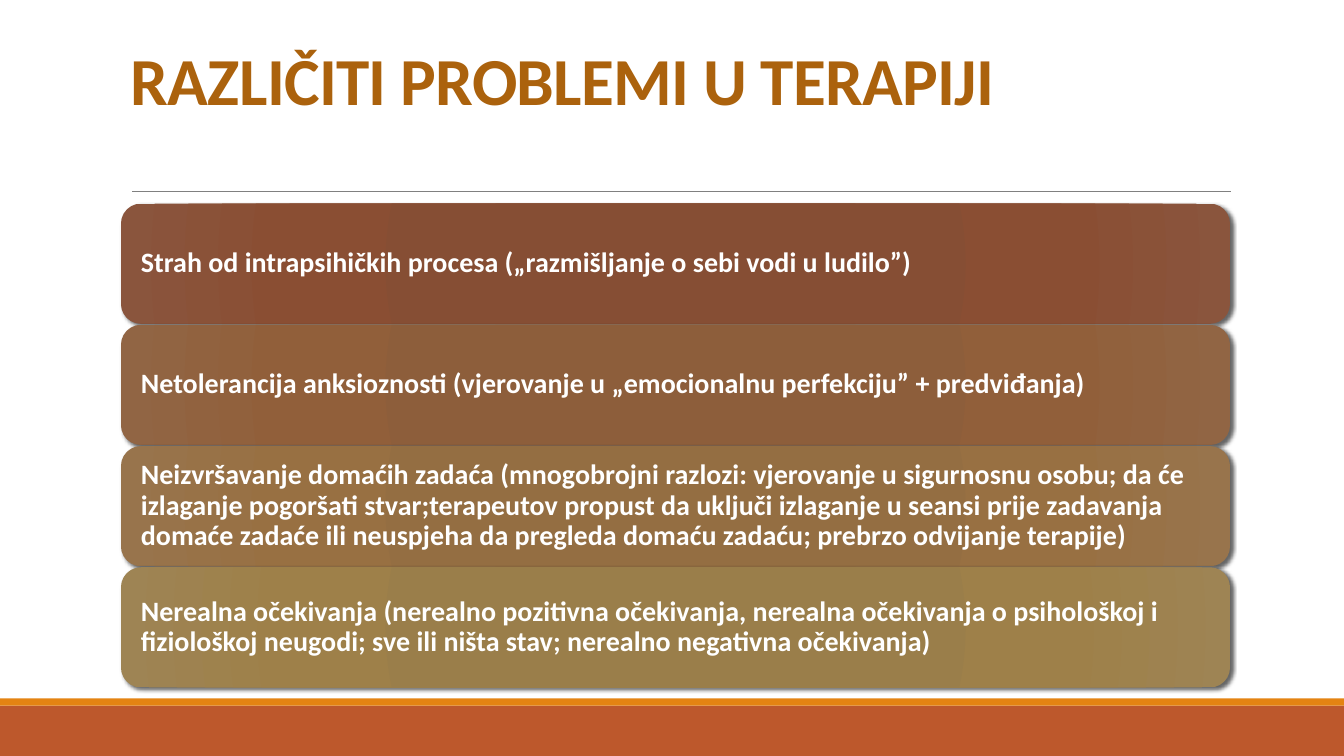
from lxml import etree
from pptx import Presentation
from pptx.dml.color import RGBColor
from pptx.enum.shapes import MSO_CONNECTOR, MSO_SHAPE
from pptx.enum.text import MSO_ANCHOR, PP_ALIGN
from pptx.oxml import parse_xml
from pptx.oxml.ns import nsdecls, qn
from pptx.util import Inches, Pt

RECT, ROUNDED = MSO_SHAPE.RECTANGLE, MSO_SHAPE.ROUNDED_RECTANGLE
STRAIGHT = MSO_CONNECTOR.STRAIGHT
MIDDLE, BOTTOM = MSO_ANCHOR.MIDDLE, MSO_ANCHOR.BOTTOM
LEFT = PP_ALIGN.LEFT

SLIDE_W, SLIDE_H = 13.33, 7.5
COLORS = {
    "title": "AB620D",
    "rule": "808080",
    "footer": "BD582C",
    "stripe": "E48312",
    "text": "FFFFFF",
    "shadow": "000000",
}
GRADIENT_STOPS = (0, 34, 70, 100)
PROBLEMS = [
    ("Strah od intrapsihičkih procesa („razmišljanje o sebi vodi u ludilo”)",
     ("874C32", "864E34", "8A4E33", "8A553D")),
    ("Netolerancija anksioznosti (vjerovanje u „emocionalnu perfekciju” + predviđanja)",
     ("8E5D39", "8D5E3B", "915F3A", "916544")),
    ("Neizvršavanje domaćih zadaća (mnogobrojni razlozi: vjerovanje u sigurnosnu osobu; "
     "da će izlaganje pogoršati stvar;terapeutov propust da uključi izlaganje u seansi "
     "prije zadavanja domaće zadaće ili neuspjeha da pregleda domaću zadaću; "
     "prebrzo odvijanje terapije)",
     ("946D40", "946E42", "987042", "98744C")),
    ("Nerealna očekivanja (nerealno pozitivna očekivanja, nerealna očekivanja o "
     "psihološkoj i fiziološkoj neugodi; sve ili ništa stav; nerealno negativna očekivanja)",
     ("9A7D48", "9A7E4A", "9E8049", "9E8454")),
]


def rgb(name):
    return RGBColor.from_string(COLORS[name])


def write_text(sp, text, size, color, spacing, frame):
    tf = sp.text_frame
    for key, value in {"word_wrap": True, **frame}.items():
        setattr(tf, key, value)
    p = tf.paragraphs[0]
    p.alignment, p.line_spacing = LEFT, spacing
    r = p.add_run()
    r.text = text
    for key, value in {"name": "Calibri", "size": Pt(size), "bold": True}.items():
        setattr(r.font, key, value)
    r.font.color.rgb = rgb(color)
    return r


def fill_radial(sp, colors):
    """Fill a shape with a circular gradient."""
    stops = "".join(
        f'<a:gs pos="{pos * 1000}"><a:srgbClr val="{color}"/></a:gs>'
        for pos, color in zip(GRADIENT_STOPS, colors))
    sp.fill.background()
    no_fill = sp._element.spPr.find(qn("a:noFill"))
    no_fill.getparent().replace(no_fill, parse_xml(
        f'<a:gradFill {nsdecls("a")} rotWithShape="1"><a:gsLst>{stops}</a:gsLst>'
        '<a:path path="circle"><a:fillToRect l="100000" t="100000" r="100000" b="100000"/>'
        '</a:path></a:gradFill>'))


def cast_shadow(sp):
    sp.shadow.inherit = False
    sp._element.spPr.find(qn("a:effectLst")).append(parse_xml(
        f'<a:outerShdw {nsdecls("a")} blurRad="{Pt(3)}" dist="{Pt(2)}" dir="2700000" '
        f'algn="ctr" rotWithShape="0"><a:srgbClr val="{COLORS["shadow"]}">'
        '<a:alpha val="60000"/></a:srgbClr></a:outerShdw>'))


def add_footer(slide, top, height, stripe_h):
    """Draw the bottom band with a thin stripe along its upper edge."""
    for color, y, h in (("footer", top + stripe_h, height - stripe_h),
                        ("stripe", top, stripe_h)):
        sp = slide.shapes.add_shape(RECT, 0, Inches(y), Inches(SLIDE_W), Inches(h))
        sp.shadow.inherit = False
        sp.fill.solid()
        sp.fill.fore_color.rgb = rgb(color)
        sp.line.fill.background()


def add_title(slide, left, top, width, height):
    """Place the title, with a rule below it."""
    sp = slide.shapes.add_textbox(*map(Inches, (left, top, width, height)))
    r = write_text(sp, "RAZLIČITI PROBLEMI U TERAPIJI", 48, "title", 0.85,
                   {"vertical_anchor": BOTTOM})
    r.font._element.set("spc", "-50")
    x, y = left + 0.11, top + 1.59
    rule = slide.shapes.add_connector(
        STRAIGHT, Inches(x), Inches(y), Inches(x + 10.9), Inches(y))
    rule.line.color.rgb = rgb("rule")
    rule.line.width = Pt(0.5)
    etree.SubElement(rule._element.spPr, qn("a:effectLst"))


def add_problems(slide, left, top, width, height, gap=0.01):
    """Stack one rounded bar for each problem in the given box."""
    bar_h = (height - gap * (len(PROBLEMS) - 1)) / len(PROBLEMS)
    frame = {"vertical_anchor": MIDDLE}
    for side in ("left", "top", "right", "bottom"):
        frame[f"margin_{side}"] = Inches(0.14)
    for i, (text, colors) in enumerate(PROBLEMS):
        y = top + i * (bar_h + gap)
        sp = slide.shapes.add_shape(ROUNDED, *map(Inches, (left, y, width, bar_h)))
        fill_radial(sp, colors)
        sp.line.fill.background()
        cast_shadow(sp)
        write_text(sp, text, 20, "text", 0.9, frame)


def main():
    prs = Presentation()
    prs.slide_width, prs.slide_height = Inches(SLIDE_W), Inches(SLIDE_H)
    slide = prs.slides.add_slide(prs.slide_layouts[6])
    add_footer(slide, 6.93, 0.57, 0.07)
    add_title(slide, 1.2, 0.31, 11, 0.92)
    add_problems(slide, 1.2, 2.02, 11, 4.8)
    prs.save("out.pptx")


if __name__ == "__main__":
    main()
